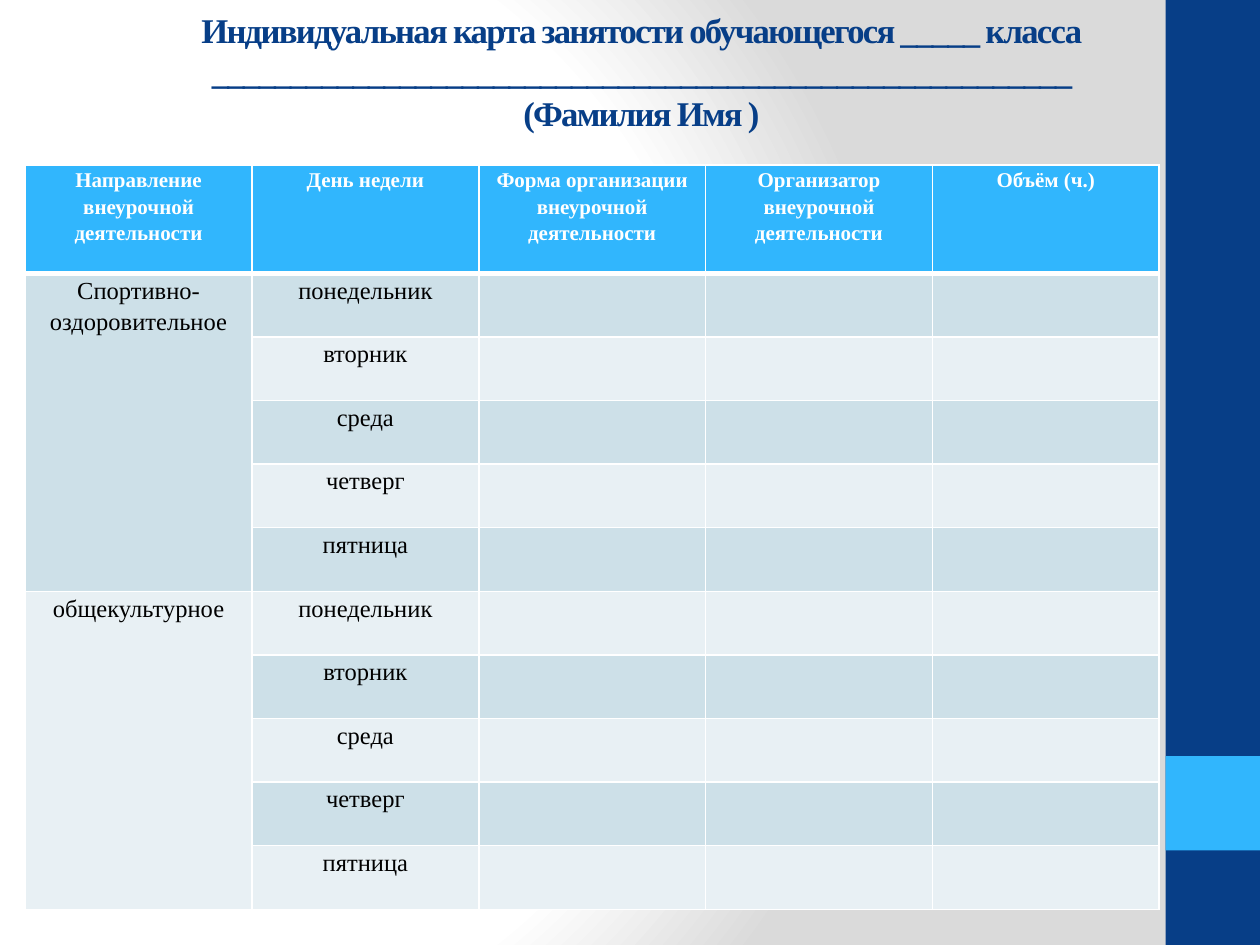
from dataclasses import dataclass

import lxml.etree
import pptx
import pptx.dml.color
import pptx.enum.shapes
import pptx.enum.text
import pptx.oxml
import pptx.oxml.ns
import pptx.util

Pt = pptx.util.Pt
RGBColor = pptx.dml.color.RGBColor

NAVY = RGBColor(0x07, 0x3E, 0x87)
SKY = RGBColor(0x31, 0xB6, 0xFD)
WHITE = RGBColor(0xFF, 0xFF, 0xFF)
BLACK = RGBColor(0, 0, 0)
GREY = RGBColor(0xDA, 0xDA, 0xDA)
BANDS = (RGBColor(0xCD, 0xE0, 0xE8), RGBColor(0xE8, 0xF0, 0xF4))
FONT = "Times New Roman"

TITLE = ("Индивидуальная карта занятости обучающегося _____ класса\n"
         + "_" * 55 + "\n(Фамилия Имя )")
HEADINGS = ("Направление внеурочной деятельности", "День недели",
            "Форма организации внеурочной деятельности",
            "Организатор внеурочной деятельности", "Объём (ч.)")
DIRECTIONS = ("Спортивно-оздоровительное", "общекультурное")
DAYS = ("понедельник", "вторник", "среда", "четверг", "пятница")

COLUMN_WIDTH = 129.6
HEADER_HEIGHT = 61.9
DAY_HEIGHT = 36.36


@dataclass
class Block:
    left: float
    top: float
    width: float
    height: float
    color: RGBColor


@dataclass
class CellStyle:
    fill: RGBColor
    text: RGBColor
    size: float
    bold: bool
    top_line: float = 1
    bottom_line: float = 1


SIDEBAR = (Block(666, 0, 54, 540, NAVY), Block(666, 432, 54, 54, SKY))


def paint_background(slide) -> None:
    slide.background.fill.solid()
    properties = slide.element.find(".//" + pptx.oxml.ns.qn("p:bgPr"))
    stops = "".join(f'<a:gs pos="{pos}"><a:srgbClr val="{color}"/></a:gs>'
                    for pos, color in ((0, WHITE), (75000, WHITE), (100000, GREY)))
    gradient = pptx.oxml.parse_xml(
        f'<a:gradFill {pptx.oxml.ns.nsdecls("a")} rotWithShape="1">'
        f'<a:gsLst>{stops}</a:gsLst><a:path path="circle">'
        '<a:fillToRect l="20000" t="50000" r="100000" b="50000"/>'
        '</a:path></a:gradFill>')
    properties.replace(properties[0], gradient)


def draw_block(slide, block: Block) -> None:
    bar = slide.shapes.add_shape(
        pptx.enum.shapes.MSO_SHAPE.RECTANGLE,
        Pt(block.left), Pt(block.top), Pt(block.width), Pt(block.height))
    bar.shadow.inherit = False
    bar.fill.solid()
    bar.fill.fore_color.rgb = block.color
    bar.line.fill.background()


def format_run(run, size: float, color: RGBColor, bold: bool) -> None:
    run.font.name = FONT
    run.font.size = Pt(size)
    run.font.bold = bold
    run.font.color.rgb = color


def write_title(slide) -> None:
    title = slide.shapes.title
    title.left, title.top, title.width, title.height = Pt(42.5), Pt(5), Pt(648), Pt(71)
    frame = title.text_frame
    frame.text = TITLE
    frame.word_wrap = True
    frame.auto_size = pptx.enum.text.MSO_AUTO_SIZE.NONE
    frame.vertical_anchor = pptx.enum.text.MSO_ANCHOR.MIDDLE
    frame.margin_top = frame.margin_bottom = 0
    for paragraph in frame.paragraphs:
        paragraph.alignment = pptx.enum.text.PP_ALIGN.CENTER
        for run in paragraph.runs:
            format_run(run, 19.8, NAVY, True)
            run.font._element.set("spc", "-100")


def style_cell(cell, style: CellStyle) -> None:
    cell.fill.solid()
    cell.fill.fore_color.rgb = style.fill
    cell.margin_left = cell.margin_right = Pt(5)
    cell.margin_top = cell.margin_bottom = 0
    for paragraph in cell.text_frame.paragraphs:
        paragraph.alignment = pptx.enum.text.PP_ALIGN.CENTER
        paragraph.line_spacing = 1.15
        for run in paragraph.runs:
            format_run(run, style.size, style.text, style.bold)
    # Borders come before the fill in the cell properties
    borders = (("L", 1), ("R", 1), ("T", style.top_line), ("B", style.bottom_line))
    properties = cell._tc.get_or_add_tcPr()
    for place, (side, width) in enumerate(borders):
        properties.insert(place, pptx.oxml.parse_xml(
            f'<a:ln{side} {pptx.oxml.ns.nsdecls("a")} w="{Pt(width)}"><a:solidFill>'
            f'<a:srgbClr val="{WHITE}"/></a:solidFill></a:ln{side}>'))


def draw_schedule(slide) -> None:
    day_rows = len(DIRECTIONS) * len(DAYS)
    schedule = slide.shapes.add_table(
        day_rows + 1, len(HEADINGS), Pt(14.4), Pt(94.3),
        Pt(COLUMN_WIDTH * len(HEADINGS)),
        Pt(HEADER_HEIGHT + DAY_HEIGHT * day_rows)).table
    for column in schedule.columns:
        column.width = Pt(COLUMN_WIDTH)
    for index, row in enumerate(schedule.rows):
        row.height = Pt(DAY_HEIGHT if index else HEADER_HEIGHT)

    # Wording
    for column, heading in enumerate(HEADINGS):
        schedule.cell(0, column).text_frame.text = heading
    for group, direction in enumerate(DIRECTIONS):
        first = 1 + group * len(DAYS)
        schedule.cell(first, 0).merge(schedule.cell(first + len(DAYS) - 1, 0))
        schedule.cell(first, 0).text_frame.text = direction
        for offset, day in enumerate(DAYS):
            schedule.cell(first + offset, 1).text_frame.text = day

    # Header and alternating bands
    for index, row in enumerate(schedule.rows):
        if index == 0:
            style = CellStyle(SKY, WHITE, 12, True, bottom_line=3)
        else:
            style = CellStyle(BANDS[(index - 1) % 2], BLACK, 14, False,
                              top_line=3 if index == 1 else 1)
        for cell in row.cells:
            style_cell(cell, style)


def main() -> None:
    deck = pptx.Presentation()
    deck.slide_width, deck.slide_height = Pt(720), Pt(540)
    slide = deck.slides.add_slide(deck.slide_layouts[5])
    paint_background(slide)
    for block in SIDEBAR:
        draw_block(slide, block)
    draw_schedule(slide)
    write_title(slide)
    deck.save("out.pptx")


if __name__ == "__main__":
    main()
